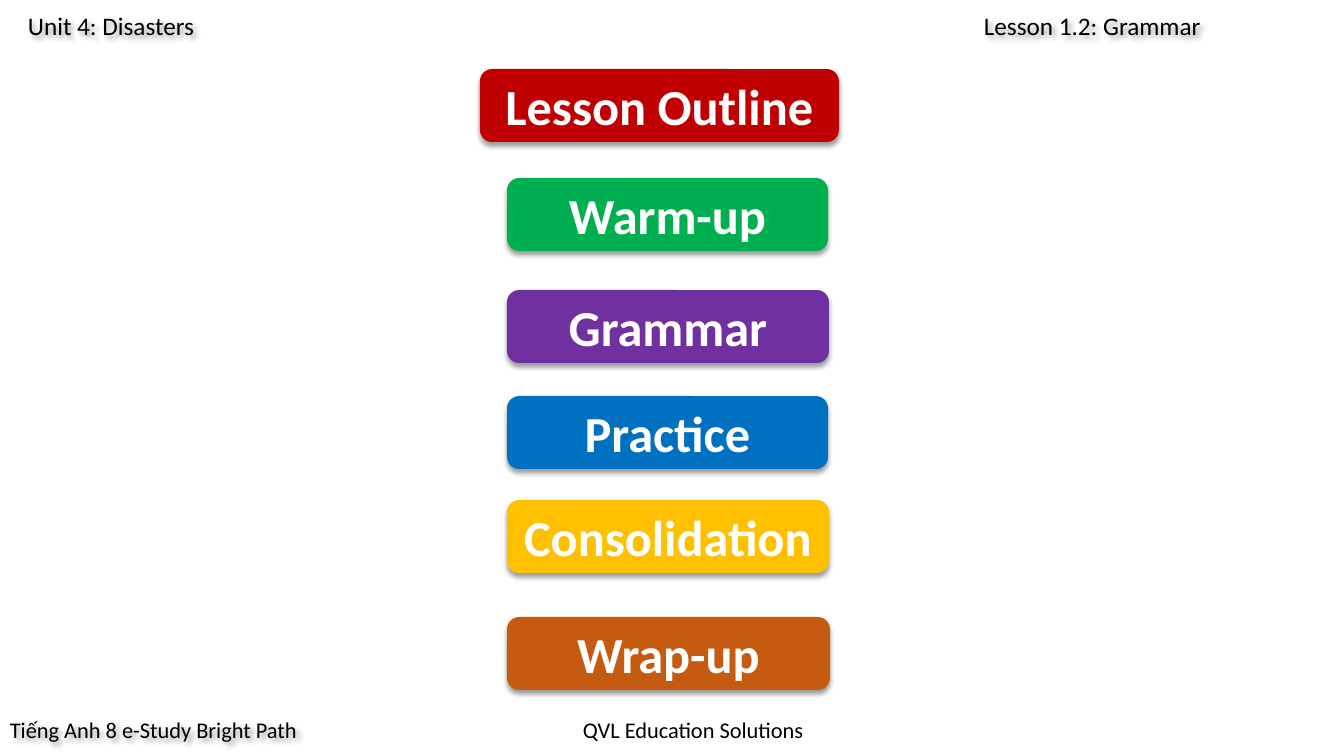
from lxml import etree
from pptx import Presentation
from pptx.dml.color import RGBColor as Rgb
from pptx.enum.shapes import MSO_SHAPE as Kind
from pptx.enum.text import MSO_ANCHOR as Anchor, MSO_AUTO_SIZE as Auto, PP_ALIGN as Align
from pptx.oxml.ns import qn
from pptx.util import Pt

PX = 914400 / 100.8
HUES = {
    "black": "000000", "white": "FFFFFF", "red": "C00000", "green": "00B050",
    "purple": "7030A0", "blue": "0070C0", "gold": "FFC000", "rust": "C55A11",
}


def write(shape, text, size, hue, bold=False):
    para = shape.text_frame.paragraphs[0]
    para.text = text
    font = para.font
    font.name, font.size, font.bold = "Calibri", Pt(size), bold
    font.color.rgb = Rgb.from_string(HUES[hue])
    return para


def shade(shape, angle):
    shape.shadow.inherit = False
    effects = shape._element.spPr.find(qn("a:effectLst"))
    outer = etree.SubElement(effects, qn("a:outerShdw"), blurRad=str(Pt(4)),
                             dist=str(Pt(3)), dir=str(angle * 60000), algn="t", rotWithShape="0")
    tint = etree.SubElement(outer, qn("a:srgbClr"), val=HUES["black"])
    etree.SubElement(tint, qn("a:alpha"), val="40000")


deck = Presentation()
deck.slide_width, deck.slide_height = round(1344 * PX), round(756 * PX)
slide = deck.slides.add_slide(deck.slide_layouts[6])

labels = [
    ("Lesson 1.2: Grammar", 974, 5, 365, 40, 18, True, True),
    ("Unit 4: Disasters", 18, 5, 495, 40, 18, True, True),
    ("Tiếng Anh 8 e-Study Bright Path", 0, 711, 324, 37, 16, False, True),
    ("QVL Education Solutions", 573, 711, 248, 37, 16, False, False),
]
for text, x, y, wide, high, size, wrap, dark in labels:
    box = slide.shapes.add_textbox(*[round(n * PX) for n in (x, y, wide, high)])
    box.text_frame.word_wrap = wrap
    box.text_frame.auto_size = Auto.SHAPE_TO_FIT_TEXT
    write(box, text, size, "black")
    if dark:
        shade(box, 45)

steps = [
    ("Lesson Outline", "red", 480, 69, 359),
    ("Warm-up", "green", 507, 178, 321),
    ("Grammar", "purple", 507, 290, 322),
    ("Practice", "blue", 507, 396, 321),
    ("Consolidation", "gold", 507, 500, 322),
    ("Wrap-up", "rust", 507, 617, 323),
]
for text, hue, x, y, wide in steps:
    card = slide.shapes.add_shape(Kind.ROUNDED_RECTANGLE,
                                  *[round(n * PX) for n in (x, y, wide, 73)])
    card.fill.solid()
    card.fill.fore_color.rgb = Rgb.from_string(HUES[hue])
    card.line.fill.background()
    shade(card, 90)
    card.text_frame.word_wrap = True
    card.text_frame.vertical_anchor = Anchor.MIDDLE
    write(card, text, 36, "white", True).alignment = Align.CENTER

deck.save("out.pptx")
